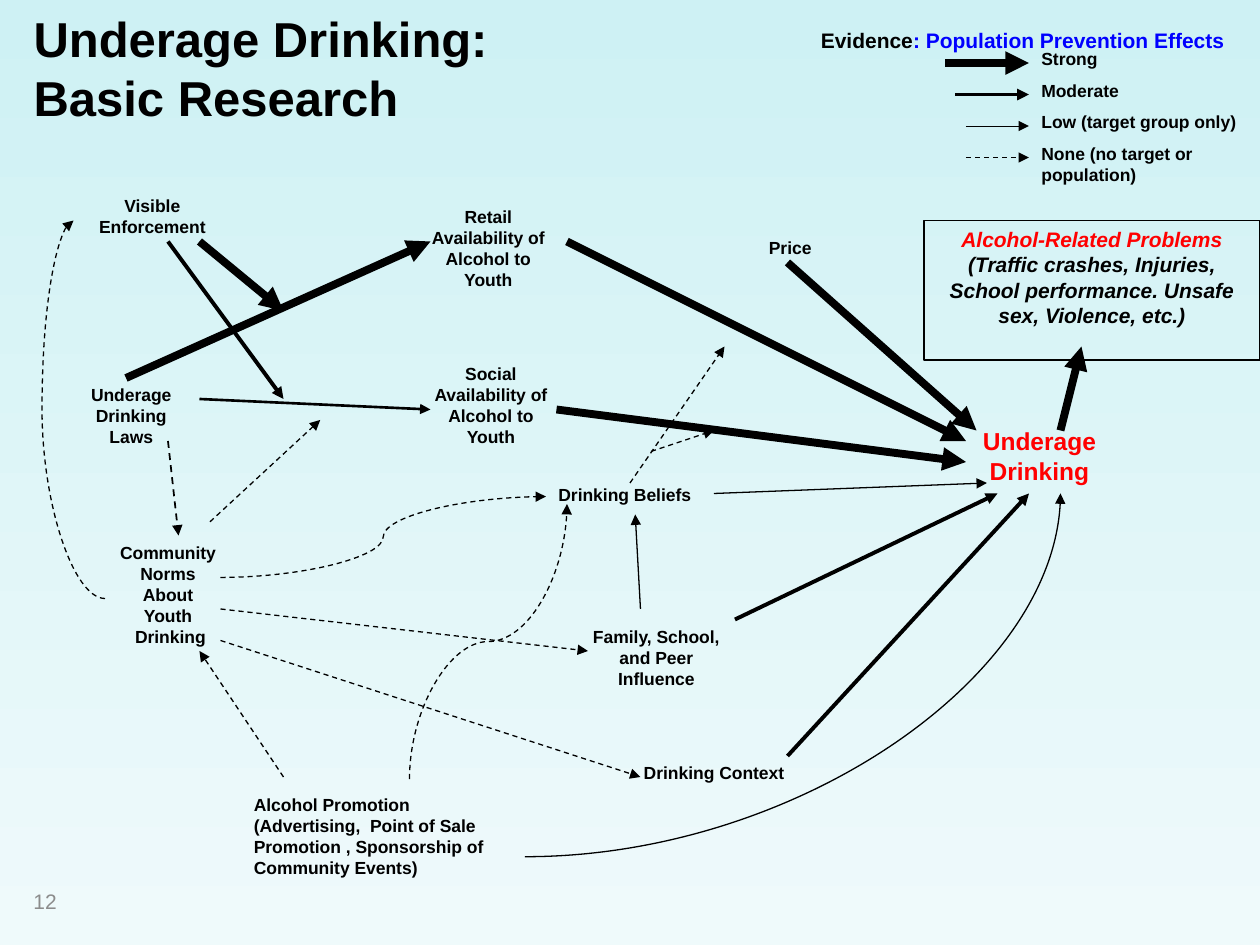
from lxml import etree
from pptx import Presentation
from pptx.dml.color import RGBColor
from pptx.enum.dml import MSO_LINE
from pptx.enum.shapes import MSO_CONNECTOR, MSO_SHAPE
from pptx.enum.text import MSO_ANCHOR, MSO_AUTO_SIZE, PP_ALIGN
from pptx.oxml.ns import qn
from pptx.util import Inches, Pt

LEFT, MID = PP_ALIGN.LEFT, PP_ALIGN.CENTER
LINE, CURVE = MSO_CONNECTOR.STRAIGHT, MSO_CONNECTOR.CURVE
DASH, SOLID = MSO_LINE.DASH, MSO_LINE.SOLID
BLACK, RED, BLUE, GRAY = "000000", "FF0000", "0000FF", "8C8C8C"

deck = Presentation()
deck.slide_width, deck.slide_height = Inches(10), Inches(7.5)
unit = deck.slide_width / 120
slide = deck.slides.add_slide(deck.slide_layouts[5])
shapes = slide.shapes
hue = RGBColor.from_string

back = slide.background.fill
back.gradient()
back.gradient_angle = 270
for stop, tint in zip(back.gradient_stops, ("CEF1F4", "EFFAFB")):
    stop.color.rgb = hue(tint)


def write(shape, rows, size, align=MID, bold=True, italic=False):
    frame = shape.text_frame
    frame.word_wrap = True
    frame.auto_size = MSO_AUTO_SIZE.NONE
    frame.text = "\n".join(text for text, _ in rows)
    for para, (_, color) in zip(frame.paragraphs, rows):
        para.alignment = align
        font = para.font
        font.name, font.size, font.bold, font.italic = "Arial", Pt(size), bold, italic
        font.color.rgb = hue(color)
    return frame


def arrow(kind, ends, weight, dash):
    link = shapes.add_connector(kind, *[round(n * unit) for n in ends])
    link.line.color.rgb = hue(BLACK)
    link.line.width = Pt(weight)
    link.line.dash_style = dash
    etree.SubElement(link.line._get_or_add_ln(), qn("a:tailEnd"), type="triangle")
    etree.SubElement(link._element.spPr, qn("a:effectLst"))
    return link._element.spPr


title = shapes.title
title.left, title.top, title.width, title.height = [
    round(n * unit) for n in (2, 0.5, 76.4, 16)]
frame = write(title, [("Underage Drinking: \vBasic Research", BLACK)], 28, LEFT)
frame.vertical_anchor = MSO_ANCHOR.MIDDLE
frame.margin_bottom = Inches(0.4)

panel = shapes.add_shape(
    MSO_SHAPE.RECTANGLE, *[round(n * unit) for n in (88, 21, 32, 13.3)])
panel.shadow.inherit = False
panel.fill.background()
panel.line.color.rgb = hue(BLACK)
panel.line.width = Pt(0.75)
frame = write(panel, [
    ("Alcohol-Related Problems", RED),
    ("(Traffic crashes, Injuries,", BLACK),
    ("School performance. Unsafe sex, Violence, etc.)", BLACK),
], 12, italic=True)
frame.vertical_anchor = MSO_ANCHOR.TOP

notes = [
    ("Retail Availability of Alcohol to Youth", 39, 19, 15, 9.2, 10, MID, BLACK),
    ("Visible Enforcement", 7, 18, 15, 6, 10, MID, BLACK),
    ("Underage Drinking Laws", 6, 36, 13, 7.2, 10, MID, BLACK),
    ("Underage Drinking", 89, 40, 20, 6, 14, MID, RED),
    ("Social Availability of Alcohol to Youth", 40, 34, 13.5, 10.5, 10, MID, BLACK),
    ("Drinking Beliefs", 52, 45.5, 16.5, 6, 10, LEFT, BLACK),
    ("Family, School, and Peer Influence", 55, 59, 15, 7.2, 10, MID, BLACK),
    ("Drinking Context", 59, 72, 18, 3.2, 10, MID, BLACK),
    ("Price", 70, 22, 10.5, 3.2, 10, MID, BLACK),
    ("Community Norms About Youth\n Drinking", 10, 51, 12, 12, 10, MID, BLACK),
    ("Alcohol Promotion (Advertising,  Point of Sale Promotion , "
     "Sponsorship of Community Events)", 23, 75, 26.2, 9.2, 10, LEFT, BLACK),
    ("Evidence", 77, 2, 43, 6, 12, LEFT, BLACK),
    ("12", 2, 83.4, 28, 4.8, 12, LEFT, GRAY),
]
keys = ["Strong", "Moderate", "Low (target group only)",
        "None (no target or population)"]
for row, (text, wide, high) in enumerate(
        zip(keys, (8.4, 9.8, 22, 22), (3.2, 3.2, 3.2, 5.2))):
    notes.append((text, 98, 4 + 3 * row, wide, high, 10, LEFT, BLACK))

for text, x, y, wide, high, size, align, color in notes:
    box = shapes.add_textbox(*[round(n * unit) for n in (x, y, wide, high)])
    rows = [(part, color) for part in text.split("\n")]
    frame = write(box, rows, size, align, color != GRAY)
    if color == GRAY:
        frame.vertical_anchor = MSO_ANCHOR.MIDDLE
    if text == "Evidence":
        run = frame.paragraphs[0].add_run()
        run.text = ": Population Prevention Effects"
        run.font.color.rgb = hue(BLUE)

groups = [
    (4.5, SOLID, [
        (19, 23, 27, 29.6), (12, 36, 41, 23), (101, 41, 103, 33),
        (54, 23, 92, 42), (53, 39, 92, 44), (75, 25, 93, 41), (90, 6, 98, 6)]),
    (2.25, SOLID, [
        (16, 23, 27, 38), (75, 72, 98, 47), (70, 59, 95, 47), (91, 9, 98, 9)]),
    (1.5, SOLID, [(19, 38, 41, 39)]),
    (1, DASH, [(16, 42, 17, 51)]),
    (0.75, SOLID, [(61, 58, 60.5, 49), (68, 47, 94, 46)]),
    (0.5, SOLID, [(92, 12, 98, 12)]),
    (0.75, DASH, [
        (27, 74, 19, 62), (20, 49.7, 30.5, 40), (21, 58, 56, 62),
        (21, 61, 61, 74), (60, 46, 69, 33), (62, 43, 68, 41), (92, 15, 98, 15)]),
]
for weight, dash, lines in groups:
    for ends in lines:
        arrow(LINE, ends, weight, dash)

curves = [
    ((21, 55, 52, 47.3), DASH, 0, "curvedConnector3", 50000),
    ((33.4, 53.6, 59.6, 68.6), DASH, 270, "curvedConnector3", 50000),
    ((50, 81.6, 101, 47), SOLID, 0, "curvedConnector2", None),
    ((7, 21, 10, 57), DASH, 180, "curvedConnector3", 200000),
]
for ends, dash, turn, form, bend in curves:
    props = arrow(CURVE, ends, 0.75, dash)
    if turn:
        props.find(qn("a:xfrm")).set("rot", str(turn * 60000))
    geom = props.find(qn("a:prstGeom"))
    geom.set("prst", form)
    if bend:
        etree.SubElement(geom.find(qn("a:avLst")), qn("a:gd"),
                         name="adj1", fmla=f"val {bend}")

deck.save("out.pptx")
